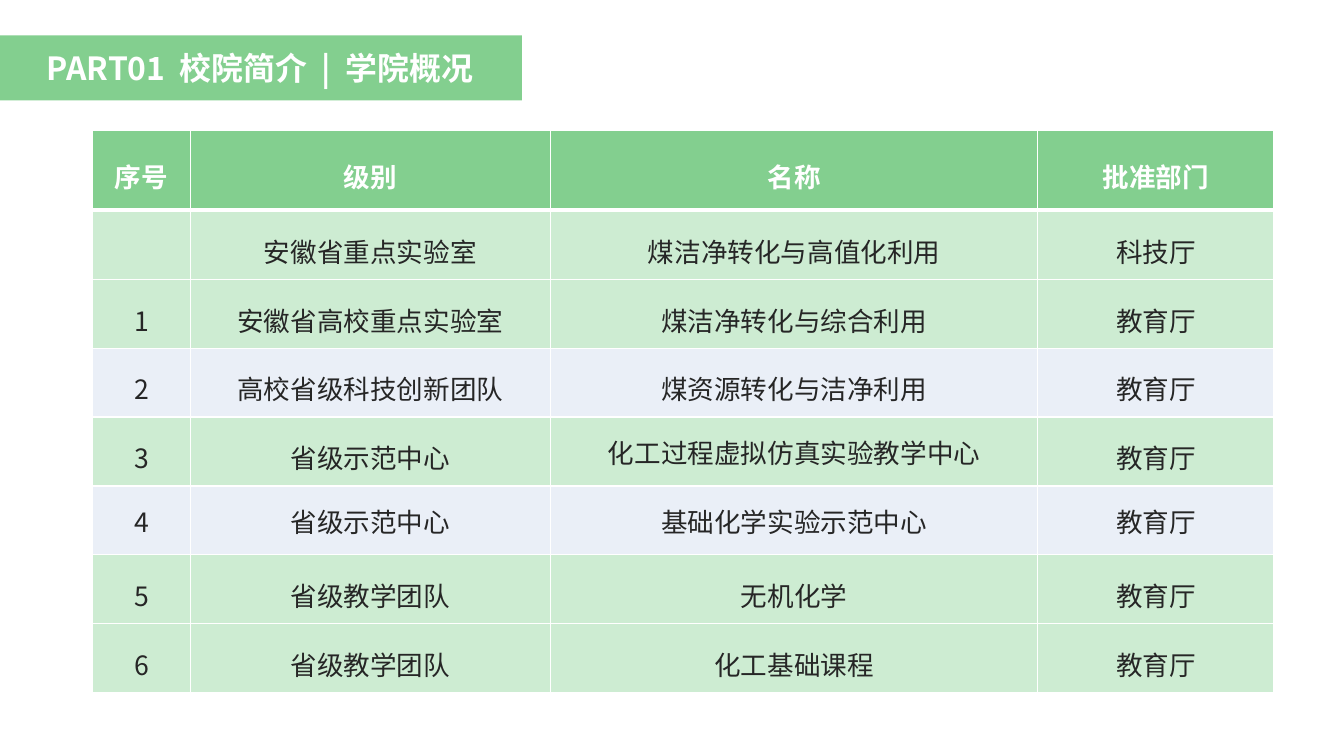
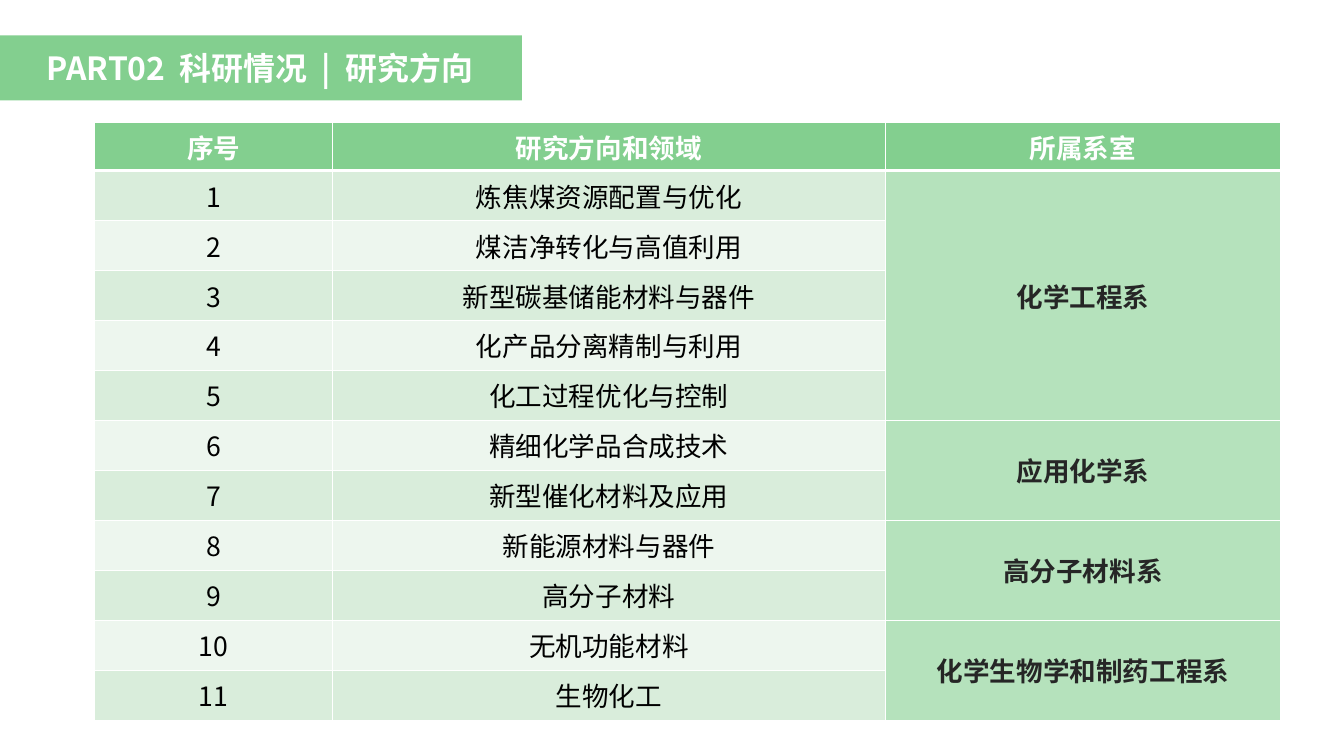
"""Build two slides on a college: its approved platforms and its research fields."""
from lxml.etree import SubElement
from pptx import Presentation
from pptx.dml.color import RGBColor
from pptx.enum.text import MSO_ANCHOR, MSO_AUTO_SIZE, PP_ALIGN
from pptx.oxml.ns import qn
from pptx.util import Inches, Pt

FONT = "Noto Sans CJK SC"
COLORS = {
    "green": "83CF8F", "mint": "CDECD2", "ice": "EAEFF7", "leaf": "B5E2BC",
    "sage": "D9EDDB", "mist": "EDF6EE", "white": "FFFFFF", "ink": "262626", "black": "000000",
}

platforms = [
    ["序号", "级别", "名称", "批准部门"],
    ["", "安徽省重点实验室", "煤洁净转化与高值化利用", "科技厅"],
    ["1", "安徽省高校重点实验室", "煤洁净转化与综合利用", "教育厅"],
    ["2", "高校省级科技创新团队", "煤资源转化与洁净利用", "教育厅"],
    ["3", "省级示范中心", "化工过程虚拟仿真实验教学中心", "教育厅"],
    ["4", "省级示范中心", "基础化学实验示范中心", "教育厅"],
    ["5", "省级教学团队", "无机化学", "教育厅"],
    ["6", "省级教学团队", "化工基础课程", "教育厅"],
]
departments = [
    ("化学工程系", ["炼焦煤资源配置与优化", "煤洁净转化与高值利用", "新型碳基储能材料与器件",
               "化产品分离精制与利用", "化工过程优化与控制"]),
    ("应用化学系", ["精细化学品合成技术", "新型催化材料及应用"]),
    ("高分子材料系", ["新能源材料与器件", "高分子材料"]),
    ("化学生物学和制药工程系", ["无机功能材料", "生物化工"]),
]
fields = [["序号", "研究方向和领域", "所属系室"]]
merges = []
for department, topics in departments:
    first = len(fields)
    for topic in topics:
        fields.append([str(len(fields)), topic, department if len(fields) == first else ""])
    merges.append((first, len(fields) - 1))

pages = [
    {
        "title": ["PART01", "校院简介", "|", "学院概况"], "rows": platforms, "merges": [],
        "left": 6.9, "top": 17.19, "columns": [7.25, 26.81, 36.27, 17.57],
        "header": 10.62, "row": 9.12, "text": "ink", "margins": (0, 0), "spacing": 1.3,
        "single": {(4, 2), (5, 0), (5, 1), (5, 2), (5, 3)},
        "bands": ["mint", "mint", "ice", "mint", "ice", "mint", "mint"],
    },
    {
        "title": ["PART02", "科研情况", "|", "研究方向"], "rows": fields, "merges": merges,
        "left": 7.04, "top": 16.18, "columns": [17.71, 41.11, 29.45],
        "header": 6.32, "row": 6.61, "text": "black", "margins": (0.1, 0.05), "spacing": None,
        "single": set(),
        "bands": ["sage", "mist"] * 5 + ["sage"],
    },
]


def style(para, size, color, bold):
    """Centre a paragraph and set its font for Latin and Chinese text."""
    para.alignment = PP_ALIGN.CENTER
    para.font.name = FONT
    para.font.size = Pt(size)
    para.font.bold = bold
    para.font.color.rgb = RGBColor.from_string(COLORS[color])
    SubElement(para._p.pPr.find(qn("a:defRPr")), qn("a:ea"), typeface=FONT)


def border(cell, **widths):
    """Give a cell white edges of the given widths in points."""
    properties = cell._tc.get_or_add_tcPr()
    for side, width in widths.items():
        line = SubElement(properties, qn(f"a:ln{side}"), w=str(Pt(width)))
        fill = SubElement(line, qn("a:solidFill"))
        SubElement(fill, qn("a:srgbClr"), val=COLORS["white"])


deck = Presentation()
deck.slide_width, deck.slide_height = Inches(14.06), Inches(7.91)
across, down = deck.slide_width / 100, deck.slide_height / 100

for content in pages:
    page = deck.slides.add_slide(deck.slide_layouts[5])

    title = page.shapes.title
    title.left, title.top = int(-0.14 * across), int(4.68 * down)
    title.width, title.height = int(38.98 * across), int(8.6 * down)
    title.fill.solid()
    title.fill.fore_color.rgb = RGBColor.from_string(COLORS["green"])
    title.text_frame.auto_size = MSO_AUTO_SIZE.NONE
    title.text_frame.vertical_anchor = MSO_ANCHOR.MIDDLE
    para = title.text_frame.paragraphs[0]
    style(para, 24, "white", True)
    for index, word in enumerate(content["title"]):
        if index:
            gap = para.add_run()
            gap.text = " "
            gap._r.get_or_add_rPr().set("spc", "540")
        para.add_run().text = word

    rows, columns = content["rows"], content["columns"]
    heights = [content["header"]] + [content["row"]] * (len(rows) - 1)
    table = page.shapes.add_table(
        len(rows), len(columns), int(content["left"] * across), int(content["top"] * down),
        int(sum(columns) * across), int(sum(heights) * down)).table
    table.horz_banding = False
    for column, share in zip(table.columns, columns):
        column.width = int(share * across)
    for row, share in zip(table.rows, heights):
        row.height = int(share * down)

    side_margin, edge_margin = content["margins"]
    for row, texts in enumerate(rows):
        for column, text in enumerate(texts):
            cell = table.cell(row, column)
            grouped = bool(content["merges"]) and column == len(columns) - 1
            if row == 0:
                fill, color, bold = "green", "white", True
            elif grouped:
                fill, color, bold = "leaf", "ink", True
            else:
                fill, color, bold = content["bands"][row - 1], content["text"], False
            border(cell, L=1, R=1, T=3 if row == 1 else 1, B=3 if row == 0 else 1)
            cell.fill.solid()
            cell.fill.fore_color.rgb = RGBColor.from_string(COLORS[fill])
            cell.vertical_anchor = MSO_ANCHOR.MIDDLE
            cell.margin_left = cell.margin_right = Inches(side_margin)
            cell.margin_top = cell.margin_bottom = Inches(edge_margin)
            cell.text = text
            para = cell.text_frame.paragraphs[0]
            style(para, 20, color, bold)
            if (row, column) not in content["single"]:
                para.line_spacing = content["spacing"]
    for first, last in content["merges"]:
        table.cell(first, len(columns) - 1).merge(table.cell(last, len(columns) - 1))

deck.save("out.pptx")
